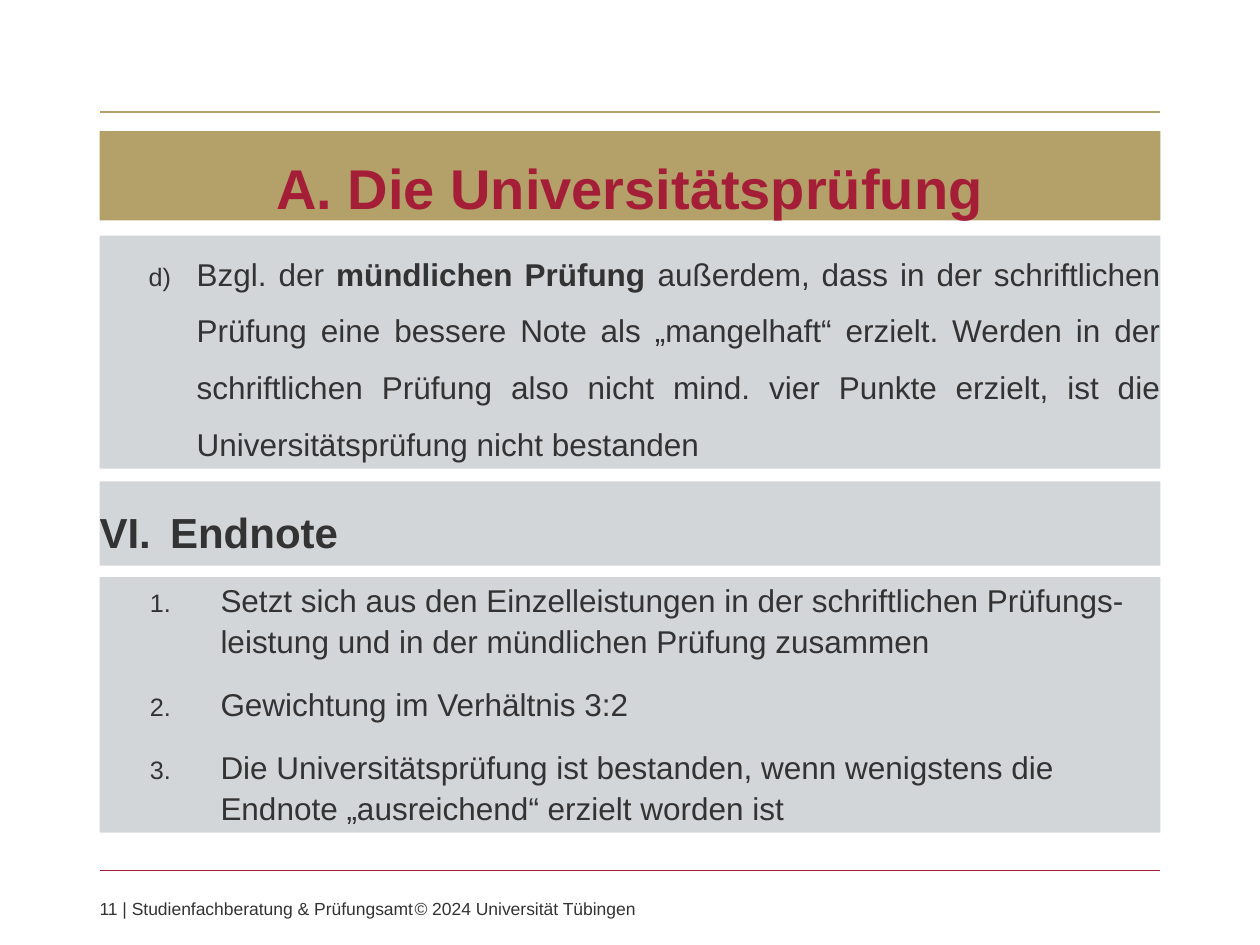
from lxml import etree
from pptx import Presentation
from pptx.dml.color import RGBColor
from pptx.enum.shapes import MSO_CONNECTOR, MSO_SHAPE
from pptx.enum.text import MSO_ANCHOR, PP_ALIGN
from pptx.oxml.ns import qn
from pptx.util import Inches, Pt

STRAIGHT = MSO_CONNECTOR.STRAIGHT
RECTANGLE = MSO_SHAPE.RECTANGLE
TOP, BOTTOM = MSO_ANCHOR.TOP, MSO_ANCHOR.BOTTOM
LEFT, CENTER, JUSTIFY = PP_ALIGN.LEFT, PP_ALIGN.CENTER, PP_ALIGN.JUSTIFY

GOLD, RED, GREY, INK = "B4A069", "A51E37", "D3D6D8", "333333"
MARGIN, WIDTH = 0.79, 8.42


def rgb(value):
    return RGBColor.from_string(value)


class SlideBuilder:
    font = "Arial"

    def __init__(self, slide):
        self.slide = slide

    def rule(self, y, color):
        line = self.slide.shapes.add_connector(
            STRAIGHT, Inches(MARGIN), Inches(y), Inches(MARGIN + WIDTH), Inches(y))
        line.line.color.rgb = rgb(color)
        line.line.width = Pt(0.75)
        etree.SubElement(line._element.spPr, qn("a:effectLst"))

    def frame(self, shape, anchor=TOP):
        """Prepare a wrapping text frame without insets."""
        frame = shape.text_frame
        frame.word_wrap = True
        frame.vertical_anchor = anchor
        frame.margin_left = frame.margin_top = 0
        frame.margin_right = frame.margin_bottom = 0
        return frame

    def panel(self, y, height, fill, anchor=TOP):
        shape = self.slide.shapes.add_shape(
            RECTANGLE, Inches(MARGIN), Inches(y), Inches(WIDTH), Inches(height))
        shape.shadow.inherit = False
        shape.fill.solid()
        shape.fill.fore_color.rgb = rgb(fill)
        shape.line.fill.background()
        return self.frame(shape, anchor)

    def text_box(self, y, height):
        return self.frame(self.slide.shapes.add_textbox(
            Inches(MARGIN), Inches(y), Inches(WIDTH), Inches(height)))

    def number(self, paragraph, scheme, indent, hanging, start=1, percent=100):
        """Add automatic numbering with a hanging indent."""
        props = paragraph._p.get_or_add_pPr()
        props.set("marL", str(Inches(indent)))
        props.set("indent", str(-Inches(hanging)))
        etree.SubElement(props, qn("a:buSzPct"), val=str(percent * 1000))
        etree.SubElement(props, qn("a:buFont"), typeface=self.font)
        etree.SubElement(props, qn("a:buAutoNum"), type=scheme, startAt=str(start))

    def style(self, paragraph, size, color=INK, bold=False, align=LEFT, spacing=1.0):
        paragraph.alignment = align
        paragraph.line_spacing = spacing
        font = paragraph.font
        font.name, font.size, font.bold = self.font, Pt(size), bold
        font.color.rgb = rgb(color)


def main():
    prs = Presentation()
    prs.slide_width, prs.slide_height = Inches(10), Inches(7.5)
    builder = SlideBuilder(prs.slides.add_slide(prs.slide_layouts[6]))

    builder.rule(0.89, GOLD)
    builder.rule(6.91, RED)

    title = builder.panel(1.04, 0.71, GOLD, BOTTOM).paragraphs[0]
    title.text = "A. Die Universitätsprüfung"
    builder.style(title, 32, RED, bold=True, align=CENTER, spacing=1.5)

    footer = builder.text_box(7.13, 0.17).paragraphs[0]
    footer.text = "11 | Studienfachberatung & Prüfungsamt\t© 2024 Universität Tübingen"
    builder.style(footer, 10)

    oral_exam = builder.panel(1.87, 1.85, GREY).paragraphs[0]
    oral_exam.level = 1
    for words, bold in (
        ("Bzgl. der ", False),
        ("mündlichen Prüfung ", True),
        ("außerdem, dass in der schriftlichen Prüfung eine bessere Note als "
         "„mangelhaft“ erzielt. Werden in der schriftlichen Prüfung also nicht mind. "
         "vier Punkte erzielt, ist die Universitätsprüfung nicht bestanden", False),
    ):
        run = oral_exam.add_run()
        run.text = words
        run.font.bold = bold
    builder.number(oral_exam, "alphaLcParenR", 0.77, 0.38, start=4, percent=80)
    builder.style(oral_exam, 18, align=JUSTIFY, spacing=1.5)

    heading = builder.panel(3.82, 0.67, GREY).paragraphs[0]
    heading.text = "Endnote"
    builder.number(heading, "romanUcPeriod", 0.56, 0.56, start=6)
    builder.style(heading, 24, bold=True, spacing=1.5)

    final_grade = builder.panel(4.58, 2.03, GREY)
    rules = (
        "Setzt sich aus den Einzelleistungen in der schriftlichen Prüfungs-leistung "
        "und in der mündlichen Prüfung zusammen",
        "Gewichtung im Verhältnis 3:2",
        "Die Universitätsprüfung ist bestanden, wenn wenigstens die Endnote "
        "„ausreichend“ erzielt worden ist",
    )
    for index, words in enumerate(rules):
        item = final_grade.add_paragraph() if index else final_grade.paragraphs[0]
        item.text = words
        item.level = 1
        builder.number(item, "arabicPeriod", 0.96, 0.56, percent=80)
        builder.style(item, 18, spacing=1.1)
        item.space_before = Pt(6 if index else 0)
        item.space_after = Pt(6)

    prs.save("out.pptx")


if __name__ == "__main__":
    main()
